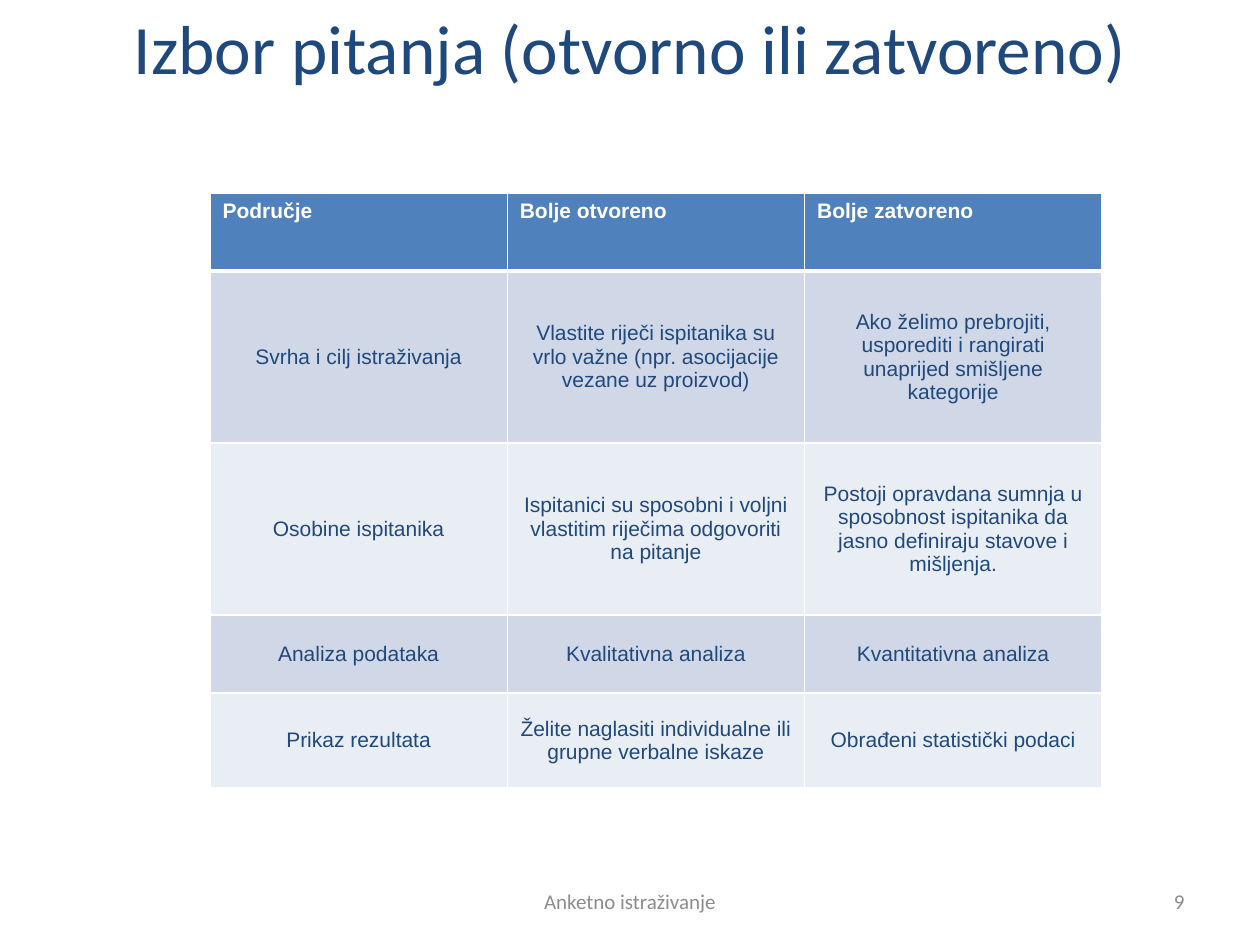
from dataclasses import dataclass

from lxml import etree
from pptx import Presentation
from pptx.dml.color import RGBColor
from pptx.enum.text import MSO_ANCHOR, PP_ALIGN
from pptx.oxml.ns import qn
from pptx.util import Emu, Pt

LEFT, CENTER, RIGHT = PP_ALIGN.LEFT, PP_ALIGN.CENTER, PP_ALIGN.RIGHT
TOP, MIDDLE = MSO_ANCHOR.TOP, MSO_ANCHOR.MIDDLE
PX_PER_INCH = 126


@dataclass(frozen=True)
class Theme:
    heading_font: str = "Calibri"
    table_font: str = "Arial"
    title_size: float = 39.6
    small_size: float = 12
    navy: str = "1F497D"
    grey: str = "8C8C8C"
    white: str = "FFFFFF"
    header_fill: str = "4F81BD"
    band_fills: tuple = ("D0D8E8", "E9EDF4")
    thin_line: float = 1
    thick_line: float = 3


THEME = Theme()

TABLE_ROWS = [
    ["Područje", "Bolje otvoreno", "Bolje zatvoreno"],
    ["Svrha i cilj istraživanja",
     "Vlastite riječi ispitanika su vrlo važne (npr. asocijacije vezane uz proizvod)",
     "Ako želimo prebrojiti, usporediti i rangirati unaprijed smišljene kategorije"],
    ["Osobine ispitanika",
     "Ispitanici su sposobni i voljni vlastitim riječima odgovoriti na pitanje",
     "Postoji opravdana sumnja u sposobnost ispitanika da jasno definiraju stavove i mišljenja."],
    ["Analiza podataka", "Kvalitativna analiza", "Kvantitativna analiza"],
    ["Prikaz rezultata",
     "Želite naglasiti individualne ili grupne verbalne iskaze",
     "Obrađeni statistički podaci"],
]
ROW_HEIGHTS = [78, 172, 172, 78, 95]


def px(length):
    return Emu(round(length * 914400 / PX_PER_INCH))


def write_text(frame, text, font, size, color, align, bold=False):
    paragraph = frame.paragraphs[0]
    paragraph.alignment = align
    run = paragraph.add_run()
    run.text = text
    run.font.name = font
    run.font.size = Pt(size)
    run.font.bold = bold
    run.font.color.rgb = RGBColor.from_string(color)


def add_label(slide, box, text, size, color, align):
    """Place one line of heading-font text, centred vertically in the box."""
    frame = slide.shapes.add_textbox(*map(px, box)).text_frame
    frame.word_wrap = True
    frame.vertical_anchor = MIDDLE
    write_text(frame, text, THEME.heading_font, size, color, align)


def add_footer(slide, box, text, number):
    left, top, width, height = box
    text_width, number_width = 400, 294
    text_left = left + (width - text_width) / 2
    number_left = left + width - number_width
    add_label(slide, (text_left, top, text_width, height), text,
              THEME.small_size, THEME.grey, CENTER)
    add_label(slide, (number_left, top, number_width, height), number,
              THEME.small_size, THEME.grey, RIGHT)


def set_borders(cell, top_width, bottom_width):
    """Draw white cell borders; must run before the cell is filled."""
    properties = cell._tc.get_or_add_tcPr()
    widths = {"lnL": THEME.thin_line, "lnR": THEME.thin_line,
              "lnT": top_width, "lnB": bottom_width}
    for side, width in widths.items():
        line = etree.SubElement(properties, qn(f"a:{side}"), w=str(Pt(width)))
        fill = etree.SubElement(line, qn("a:solidFill"))
        etree.SubElement(fill, qn("a:srgbClr"), val=THEME.white)


def add_comparison_table(slide, box, rows, row_heights):
    table = slide.shapes.add_table(len(rows), len(rows[0]), *map(px, box)).table
    for column in table.columns:
        column.width = px(box[2] / len(rows[0]))
    for row_index, (texts, height) in enumerate(zip(rows, row_heights)):
        table.rows[row_index].height = px(height)
        is_header = row_index == 0
        top_width = THEME.thick_line if row_index == 1 else THEME.thin_line
        bottom_width = THEME.thick_line if is_header else THEME.thin_line
        fill = THEME.header_fill if is_header else THEME.band_fills[(row_index - 1) % 2]
        for column_index, text in enumerate(texts):
            cell = table.cell(row_index, column_index)
            set_borders(cell, top_width, bottom_width)
            cell.fill.solid()
            cell.fill.fore_color.rgb = RGBColor.from_string(fill)
            cell.vertical_anchor = TOP if is_header else MIDDLE
            write_text(cell.text_frame, text, THEME.table_font, THEME.small_size,
                       THEME.white if is_header else THEME.navy,
                       LEFT if is_header else CENTER, is_header)


def main():
    presentation = Presentation()
    presentation.slide_width, presentation.slide_height = px(1260), px(945)
    slide = presentation.slides.add_slide(presentation.slide_layouts[6])
    add_label(slide, (94, 0, 1072, 94), "Izbor pitanja (otvorno ili zatvoreno)",
              THEME.title_size, THEME.navy, CENTER)
    add_footer(slide, (63, 876, 1134, 50), "Anketno istraživanje", "9")
    add_comparison_table(slide, (210, 193, 892, sum(ROW_HEIGHTS)), TABLE_ROWS, ROW_HEIGHTS)
    presentation.save("out.pptx")


if __name__ == "__main__":
    main()
